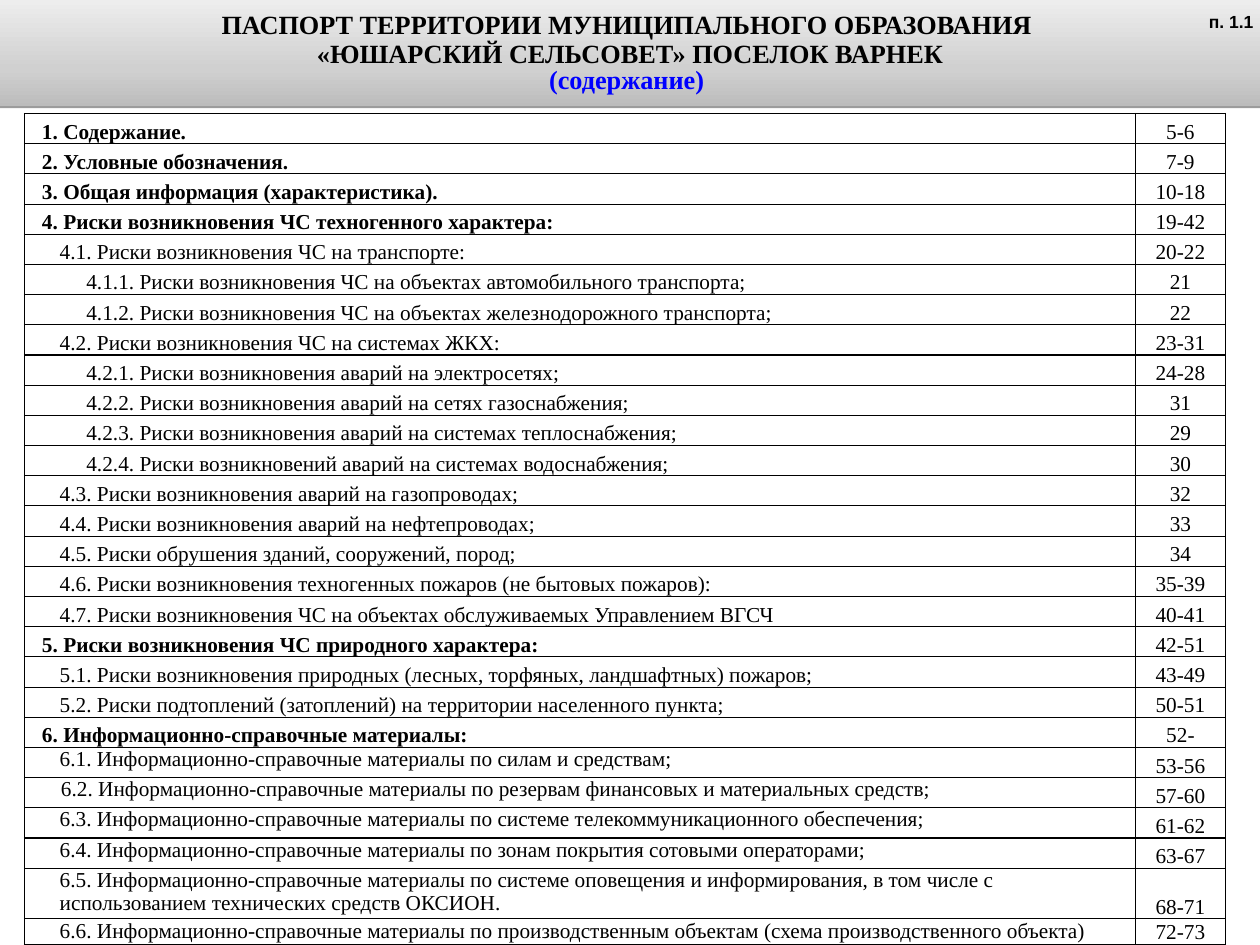
from copy import deepcopy

from lxml import etree
from pptx import Presentation
from pptx.dml.color import RGBColor
from pptx.enum import shapes, text
from pptx.oxml.ns import qn
from pptx.util import Pt

BLACK = RGBColor(0x00, 0x00, 0x00)
BLUE = RGBColor(0x00, 0x00, 0xFF)
GREYS = [(0, RGBColor(0xBC, 0xBC, 0xBC)), (0.35, RGBColor(0xD0, 0xD0, 0xD0)),
         (1, RGBColor(0xED, 0xED, 0xED))]
SERIF, SANS = "Times New Roman", "Arial"
INDENT = {1: 14, 2: 28.2, 3: 49.5}  # by depth of numbering
ROW, TALL, LAST = 24.16, 40.6, 20.2

# Entry, pages
ITEMS = [
    ("1. Содержание.", "5-6"),
    ("2. Условные обозначения.", "7-9"),
    ("3. Общая информация (характеристика).", "10-18"),
    ("4. Риски возникновения ЧС техногенного характера:", "19-42"),
    ("4.1. Риски возникновения ЧС на транспорте:", "20-22"),
    ("4.1.1. Риски возникновения ЧС на объектах автомобильного транспорта;", "21"),
    ("4.1.2. Риски возникновения ЧС на объектах железнодорожного транспорта;", "22"),
    ("4.2. Риски возникновения ЧС на системах ЖКХ:", "23-31"),
    ("4.2.1. Риски возникновения аварий на электросетях;", "24-28"),
    ("4.2.2. Риски возникновения аварий на сетях газоснабжения;", "31"),
    ("4.2.3. Риски возникновения аварий на системах теплоснабжения;", "29"),
    ("4.2.4. Риски возникновений аварий на системах водоснабжения;", "30"),
    ("4.3. Риски возникновения аварий на газопроводах;", "32"),
    ("4.4. Риски возникновения аварий на нефтепроводах;", "33"),
    ("4.5. Риски обрушения зданий, сооружений, пород;", "34"),
    ("4.6. Риски возникновения техногенных пожаров (не бытовых пожаров):", "35-39"),
    ("4.7. Риски возникновения ЧС на объектах обслуживаемых Управлением ВГСЧ", "40-41"),
    ("5. Риски возникновения ЧС природного характера:", "42-51"),
    ("5.1. Риски возникновения природных (лесных, торфяных, ландшафтных) пожаров;", "43-49"),
    ("5.2. Риски подтоплений (затоплений) на территории населенного пункта;", "50-51"),
    ("6. Информационно-справочные материалы:", "52-"),
    ("6.1. Информационно-справочные материалы по силам и средствам;", "53-56"),
    ("6.2. Информационно-справочные материалы по резервам финансовых и материальных средств;",
     "57-60"),
    ("6.3. Информационно-справочные материалы по системе телекоммуникационного обеспечения;",
     "61-62"),
    ("6.4. Информационно-справочные материалы по зонам покрытия сотовыми операторами;",
     "63-67"),
    ("6.5. Информационно-справочные материалы по системе оповещения и информирования, "
     "в том числе с использованием технических средств ОКСИОН.", "68-71"),
    ("6.6. Информационно-справочные материалы по производственным объектам "
     "(схема производственного объекта)", "72-73"),
]


def style(para, size, font=SERIF, color=BLACK, bold=True):
    for run in para.runs:
        run.font.size = Pt(size)
        run.font.name = font
        run.font.bold = bold
        run.font.color.rgb = color


def border(cell):
    props = cell._tc.get_or_add_tcPr()
    for pos, side in enumerate(("lnL", "lnR", "lnT", "lnB")):
        line = etree.Element(qn("a:" + side), w=str(Pt(1)))
        fill = etree.SubElement(line, qn("a:solidFill"))
        etree.SubElement(fill, qn("a:srgbClr"), val=str(BLACK))
        props.insert(pos, line)


def shade(shape):
    # Three-stop gradient, dark at the bottom
    shape.fill.gradient()
    shape.fill.gradient_angle = 90
    stops = shape._element.spPr.find(".//" + qn("a:gsLst"))
    stops.append(deepcopy(stops[-1]))
    for stop, (pos, color) in zip(shape.fill.gradient_stops, GREYS):
        stop.position = pos
        stop.color.rgb = color
    # Thin shadow below
    shape.shadow.inherit = False
    effects = shape._element.spPr.find(qn("a:effectLst"))
    drop = etree.SubElement(effects, qn("a:outerShdw"), blurRad="0",
                            dist=str(Pt(1.6)), dir="5400000", rotWithShape="0")
    color = etree.SubElement(drop, qn("a:srgbClr"), val=str(BLACK))
    etree.SubElement(color, qn("a:alpha"), val="38000")


def add_list(slide, left, top, width, pages):
    heights = [ROW] * (len(ITEMS) - 2) + [TALL, LAST]
    frame = slide.shapes.add_table(len(ITEMS), 2, Pt(left), Pt(top),
                                   Pt(width), Pt(sum(heights)))
    table = frame.table
    table.first_row = table.horz_banding = False
    table.columns[0].width = Pt(width - pages)
    table.columns[1].width = Pt(pages)
    for row, height, item in zip(table.rows, heights, ITEMS):
        row.height = Pt(height)
        depth = item[0].split()[0].count(".")
        for col, (cell, words) in enumerate(zip(row.cells, item)):
            cell.margin_left = cell.margin_right = 0
            cell.margin_top = cell.margin_bottom = 0
            cell.fill.background()
            border(cell)
            high = col == 0 and depth == 2 and words.startswith("6")
            cell.vertical_anchor = text.MSO_ANCHOR.TOP if high else text.MSO_ANCHOR.BOTTOM
            cell.text_frame.text = words
            para = cell.text_frame.paragraphs[0]
            if col:
                para.alignment = text.PP_ALIGN.CENTER
            else:
                inset = 29.2 if words.startswith("6.2.") else INDENT[depth]
                props = para._p.get_or_add_pPr()
                props.set("marL", str(Pt(inset)))
                props.set("indent", "0")
            style(para, 17, bold=col == 0 and depth == 1)


def add_head(slide, left, top, width, height):
    # Banner with title
    band = slide.shapes.add_shape(shapes.MSO_SHAPE.RECTANGLE, Pt(left), Pt(top),
                                  Pt(width), Pt(height))
    shade(band)
    band.line.fill.background()
    frame = band.text_frame
    frame.word_wrap = True
    frame.vertical_anchor = text.MSO_ANCHOR.MIDDLE
    title, note = frame.paragraphs[0], frame.add_paragraph()
    title.text = ("ПАСПОРТ ТЕРРИТОРИИ МУНИЦИПАЛЬНОГО ОБРАЗОВАНИЯ \v"
                  "«ЮШАРСКИЙ СЕЛЬСОВЕТ» ПОСЕЛОК ВАРНЕК")
    note.text = "(содержание) "
    for para, gap, color in ((title, 0.9, BLACK), (note, 0.8, BLUE)):
        para.alignment = text.PP_ALIGN.CENTER
        para.line_spacing = gap
        style(para, 21, color=color)

    # Section mark in the corner
    box = slide.shapes.add_textbox(Pt(left + width - 48), Pt(top + 5), Pt(50), Pt(24.5))
    box.text_frame.word_wrap = False
    box.text_frame.auto_size = text.MSO_AUTO_SIZE.SHAPE_TO_FIT_TEXT
    box.text_frame.text = "п. 1.1"
    style(box.text_frame.paragraphs[0], 14, SANS)


def main():
    deck = Presentation()
    deck.slide_width, deck.slide_height = Pt(1008), Pt(756)
    slide = deck.slides.add_slide(deck.slide_layouts[6])
    add_list(slide, 19.6, 90.8, 960.6, 71.6)
    add_head(slide, 0, 0, 1008, 85)
    deck.save("out.pptx")


if __name__ == "__main__":
    main()
